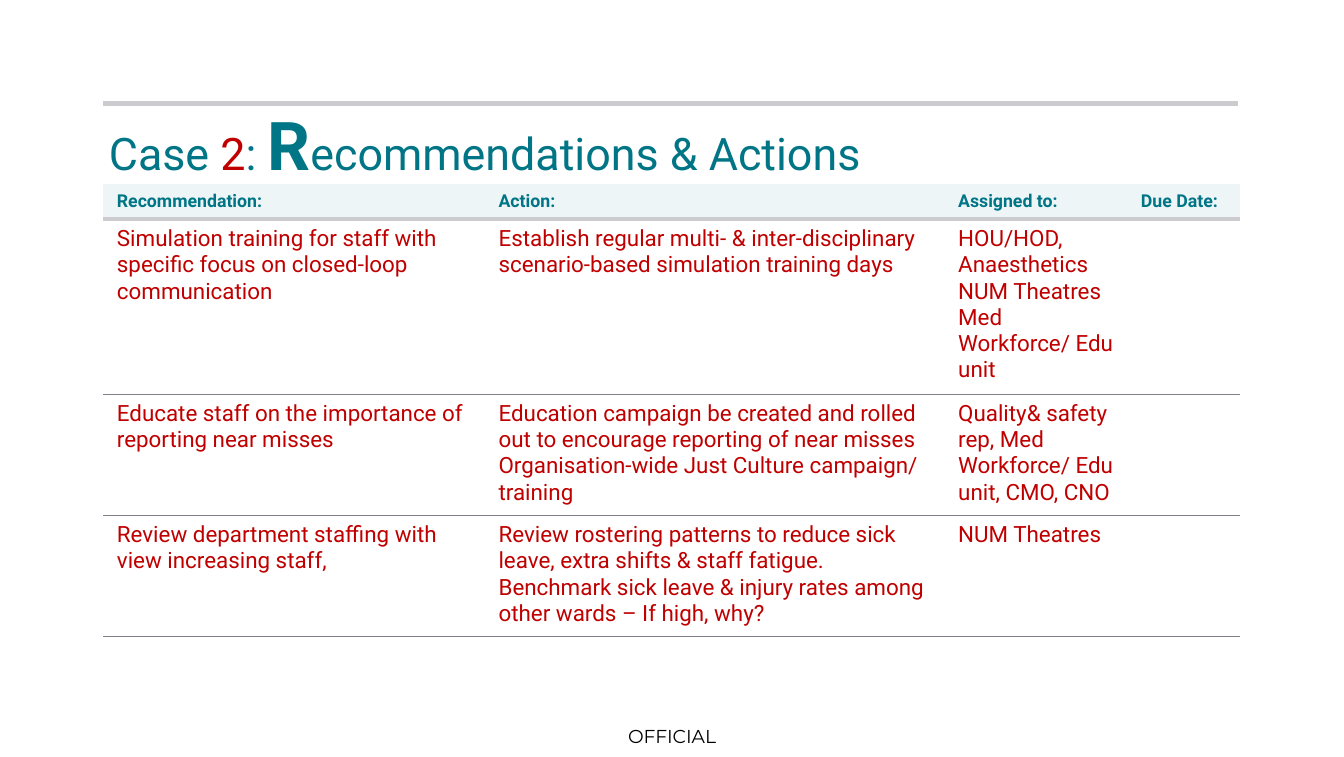
from lxml import etree
from pptx import Presentation
from pptx.dml.color import RGBColor
from pptx.enum import shapes, text
from pptx.oxml.ns import qn
from pptx.util import Inches, Pt

THEME = {
    "font": "Roboto", "footer_font": "Montserrat",
    "teal": "007586", "red": "C00000", "black": "000000",
    "band": "EDF5F7", "rule": "CCCCD0", "border": "80808B",
    "title": 24, "initial": 36, "header": 9.5, "body": 12, "footer": 10,
}
TITLE = [
    ("Case ", "teal", "title", False),
    ("2", "red", "title", False),
    (": ", "teal", "title", False),
    ("R", "teal", "initial", True),
    ("ecommendations & Actions", "teal", "title", False),
]
HEADERS = ["Recommendation:", "Action:", "Assigned to:", "Due Date:"]
ROWS = [
    (["Simulation training for staff with specific focus on closed-loop communication"],
     ["Establish regular multi- & inter-disciplinary scenario-based simulation training days"],
     ["HOU/HOD, Anaesthetics", "NUM Theatres", "Med Workforce/ Edu unit"],
     []),
    (["Educate staff on the importance of reporting near misses"],
     ["Education campaign be created and rolled out to encourage reporting of near misses",
      "Organisation-wide Just Culture campaign/ training"],
     ["Quality& safety rep, Med Workforce/ Edu unit, CMO, CNO"],
     []),
    (["Review department staffing with view increasing staff,"],
     ["Review rostering patterns to reduce sick leave, extra shifts & staff fatigue. "
      "Benchmark sick leave & injury rates among other wards – If high, why?"],
     ["NUM Theatres"],
     []),
]
FOOTER = "OFFICIAL"
COL_WIDTHS = [2.84, 3.42, 1.36, 0.84]
ROW_HEIGHTS = [0.25, 1.27, 0.88, 0.88]
LEFT, RULE_TOP, TABLE_TOP = 0.77, 0.77, 1.37
WIDTH = sum(COL_WIDTHS)


def color(name):
    return RGBColor.from_string(THEME[name])


def style(font, ink, size, bold=False, face="font"):
    font.name = THEME[face]
    font.size = Pt(THEME[size])
    font.bold = bold
    font.color.rgb = color(ink)


def set_borders(cell, **edges):
    tcPr = cell._tc.get_or_add_tcPr()
    for i, side in enumerate(("lnL", "lnR", "lnT", "lnB")):
        ink, width = edges.get(side, (None, 0))
        ln = etree.Element(qn("a:" + side), w=str(Pt(width)))
        fill = etree.SubElement(ln, qn("a:solidFill" if ink else "a:noFill"))
        if ink:
            etree.SubElement(fill, qn("a:srgbClr"), val=THEME[ink])
        tcPr.insert(i, ln)


def fill_cell(cell, lines, ink, size, bold=False):
    tf = cell.text_frame
    tf.text = "\n".join(lines)
    for p in tf.paragraphs:
        style(p.font, ink, size, bold)


def add_title(s):
    sp = s.shapes.title
    sp.left, sp.top, sp.width, sp.height = map(Inches, (LEFT, RULE_TOP, WIDTH, 0.53))
    tf = sp.text_frame
    tf.word_wrap = True
    tf.auto_size = text.MSO_AUTO_SIZE.NONE
    tf.vertical_anchor = text.MSO_ANCHOR.TOP
    tf.margin_left = tf.margin_right = tf.margin_top = tf.margin_bottom = Inches(0.04)
    p = tf.paragraphs[0]
    p.alignment = text.PP_ALIGN.LEFT
    p.line_spacing = 0.95
    p.space_after = Pt(6)
    for words, ink, size, bold in TITLE:
        r = p.add_run()
        r.text = words
        style(r.font, ink, size, bold)


def add_rule(s):
    line = s.shapes.add_connector(
        shapes.MSO_CONNECTOR.STRAIGHT,
        *map(Inches, (LEFT, RULE_TOP, 9.21, RULE_TOP)))
    line.line.color.rgb = color("rule")
    line.line.width = Pt(3)
    etree.SubElement(line._element.spPr, qn("a:effectLst"))


def add_actions_table(s):
    table = s.shapes.add_table(
        len(ROWS) + 1, len(HEADERS),
        *map(Inches, (LEFT, TABLE_TOP, WIDTH, sum(ROW_HEIGHTS)))).table
    table.horz_banding = False
    for col, width in zip(table.columns, COL_WIDTHS):
        col.width = Inches(width)
    for row, height in zip(table.rows, ROW_HEIGHTS):
        row.height = Inches(height)
    for c, header in enumerate(HEADERS):
        cell = table.cell(0, c)
        fill_cell(cell, [header], "teal", "header", True)
        cell.fill.solid()
        cell.fill.fore_color.rgb = color("band")
        set_borders(cell, lnT=("band", 0.25), lnB=("rule", 3))
    for r, row in enumerate(ROWS, 1):
        top = ("rule", 3) if r == 1 else ("border", 0.25)
        for c, lines in enumerate(row):
            cell = table.cell(r, c)
            fill_cell(cell, lines, "red", "body")
            cell.fill.background()
            set_borders(cell, lnT=top, lnB=("border", 0.25))


def add_footer(s):
    tf = s.shapes.add_textbox(*map(Inches, (4.49, 5.32, 1.02, 0.31))).text_frame
    tf.word_wrap = True
    tf.vertical_anchor = text.MSO_ANCHOR.MIDDLE
    tf.margin_left = tf.margin_right = tf.margin_top = tf.margin_bottom = 0
    p = tf.paragraphs[0]
    p.text = FOOTER
    p.alignment = text.PP_ALIGN.CENTER
    style(p.font, "black", "footer", face="footer_font")


def main():
    prs = Presentation()
    prs.slide_width, prs.slide_height = Inches(10), Inches(5.63)
    s = prs.slides.add_slide(prs.slide_layouts[5])
    add_footer(s)
    add_rule(s)
    add_title(s)
    add_actions_table(s)
    prs.save("out.pptx")


if __name__ == "__main__":
    main()
